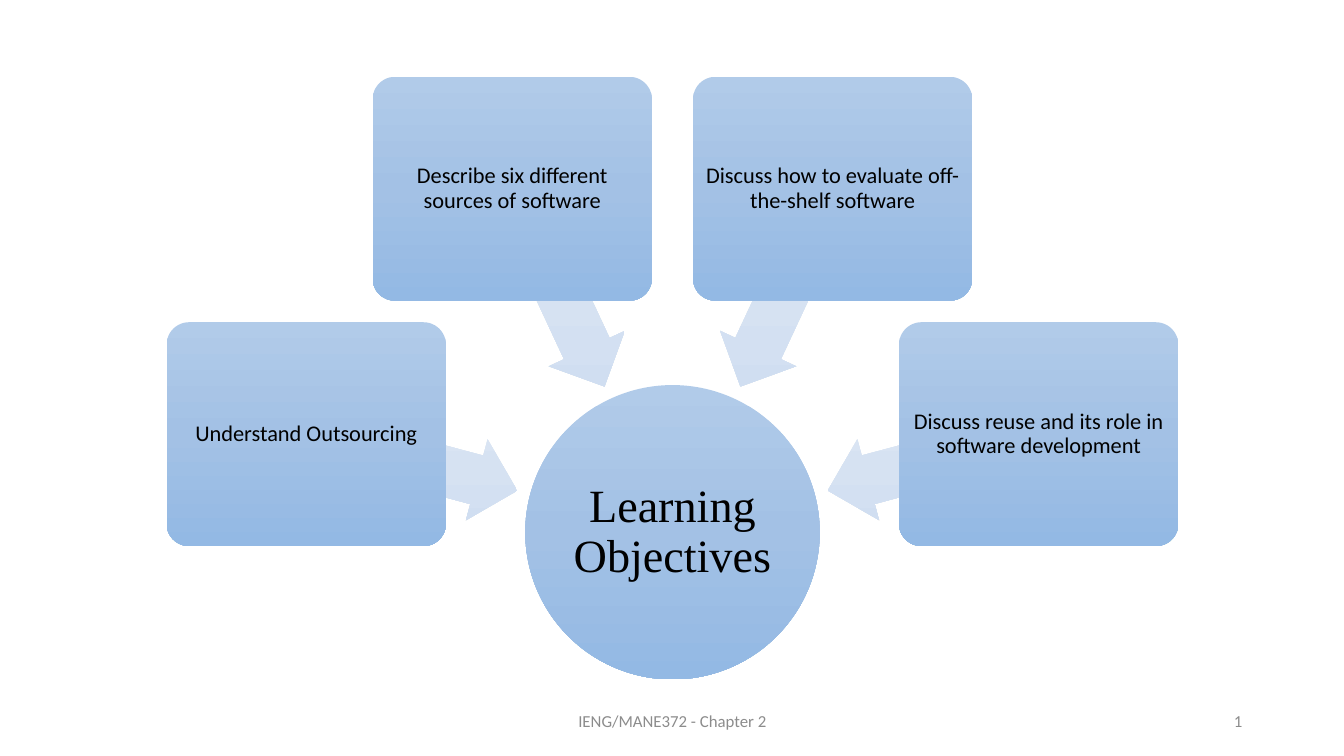
import copy
import math
from dataclasses import dataclass

import pptx
import pptx.dml.color
import pptx.enum.shapes
import pptx.enum.text
import pptx.oxml
import pptx.oxml.ns
import pptx.util

Inches = pptx.util.Inches
SHAPES = pptx.enum.shapes.MSO_SHAPE
ALIGN = pptx.enum.text.PP_ALIGN
MIDDLE = pptx.enum.text.MSO_ANCHOR.MIDDLE


@dataclass(frozen=True)
class Theme:
    node: tuple = ("B1CBE9", "A3C1E5", "93B9E4")
    arrow: tuple = ("E3EBF6", "D6E2F2", "D0DEF1")
    text: str = "000000"
    footer: str = "8C8C8C"
    heading_font: str = "Times New Roman"
    body_font: str = "Calibri"
    heading_size: int = 33
    body_size: int = 16
    footer_size: int = 12


THEME = Theme()

OBJECTIVES = [
    "Understand Outsourcing",
    "Describe six different sources of software",
    "Discuss how to evaluate off-the-shelf software",
    "Discuss reuse and its role in software development",
]
FIRST_ANGLE, ANGLE_STEP = 195, 50
HUB_SIZE = 2.92
CARD_WIDTH, CARD_HEIGHT, CARD_RADIUS = 2.77, 2.22, 3.76
ARROW_WIDTH, ARROW_HEIGHT, ARROW_RADIUS = 2.17, 0.83, 2.68


def rgb(value):
    return pptx.dml.color.RGBColor.from_string(value)


def paint(shape, colours):
    """Fill with an upright three-stop gradient, without line or shadow."""
    shape.shadow.inherit = False
    shape.line.fill.background()
    shape.fill.gradient()
    shape.fill.gradient_angle = 270
    gradient = shape.fill._xPr.find(pptx.oxml.ns.qn("a:gradFill"))
    gradient.set("rotWithShape", "0")
    stop_list = gradient.find(pptx.oxml.ns.qn("a:gsLst"))
    stop_list.insert(1, copy.deepcopy(stop_list[0]))
    for stop, colour, position in zip(shape.fill.gradient_stops, colours, (0, 0.5, 1)):
        stop.color.rgb = rgb(colour)
        stop.position = position


def style(para, font, size, colour, align):
    para.alignment = align
    para.font.name = font
    para.font.size = pptx.util.Pt(size)
    para.font.color.rgb = rgb(colour)


def add_centred(page, kind, x, y, width, height, colours):
    shape = page.shapes.add_shape(kind, Inches(x - width / 2), Inches(y - height / 2),
                                  Inches(width), Inches(height))
    paint(shape, colours)
    return shape


def label(shape, text, font, size, inset):
    frame = shape.text_frame
    frame.word_wrap = True
    frame.vertical_anchor = MIDDLE
    frame.margin_left = frame.margin_right = Inches(inset)
    frame.margin_top = frame.margin_bottom = Inches(inset)
    para = frame.paragraphs[0]
    para.text = text
    para.line_spacing = 0.9
    style(para, font, size, THEME.text, ALIGN.CENTER)


def add_objectives(page, x, y):
    """Draw the hub centred at (x, y) with cards and arrows on arcs around it."""
    hub = add_centred(page, SHAPES.OVAL, x, y, HUB_SIZE, HUB_SIZE, THEME.node)
    label(hub, "Learning Objectives", THEME.heading_font, THEME.heading_size, 0.02)
    for index, objective in enumerate(OBJECTIVES):
        angle = FIRST_ANGLE + index * ANGLE_STEP
        dx, dy = math.cos(math.radians(angle)), math.sin(math.radians(angle))
        arrow = add_centred(page, SHAPES.LEFT_ARROW, x + ARROW_RADIUS * dx,
                            y + ARROW_RADIUS * dy, ARROW_WIDTH, ARROW_HEIGHT, THEME.arrow)
        arrow.adjustments[0] = 0.6
        arrow.rotation = angle
        card = add_centred(page, SHAPES.ROUNDED_RECTANGLE, x + CARD_RADIUS * dx,
                           y + CARD_RADIUS * dy, CARD_WIDTH, CARD_HEIGHT, THEME.node)
        card.adjustments[0] = 0.1
        label(card, objective, THEME.body_font, THEME.body_size, 0.03)


def add_footer_box(page, left, top, width, height, align):
    box = page.shapes.add_textbox(Inches(left), Inches(top), Inches(width), Inches(height))
    box.text_frame.word_wrap = True
    box.text_frame.vertical_anchor = MIDDLE
    para = box.text_frame.paragraphs[0]
    style(para, THEME.body_font, THEME.footer_size, THEME.footer, align)
    return para


def add_footer(page, left, top, width, height):
    """Place the chapter name in the middle and the page number at the right."""
    number = add_footer_box(page, left + width - 3, top, 3, height, ALIGN.RIGHT)
    run = number.add_run()
    run.text = "4"
    span = copy.deepcopy(number.font._element)
    span.tag = pptx.oxml.ns.qn("a:rPr")
    field = pptx.oxml.parse_xml(
        f'<a:fld {pptx.oxml.ns.nsdecls("a")} type="slidenum" '
        'id="{B6F15528-21DE-4FAA-801E-634DDDAF4B2B}"><a:t>4</a:t></a:fld>')
    field.insert(0, span)
    number._p.replace(run._r, field)
    chapter = add_footer_box(page, left + (width - 4.5) / 2, top, 4.5, height, ALIGN.CENTER)
    chapter.text = "IENG/MANE372 - Chapter 2"


def main():
    deck = pptx.Presentation()
    deck.slide_width, deck.slide_height = Inches(13.33), Inches(7.5)
    page = deck.slides.add_slide(deck.slide_layouts[6])
    add_objectives(page, 6.67, 5.28)
    add_footer(page, 0.92, 6.95, 11.5, 0.4)
    deck.save("out.pptx")


if __name__ == "__main__":
    main()
